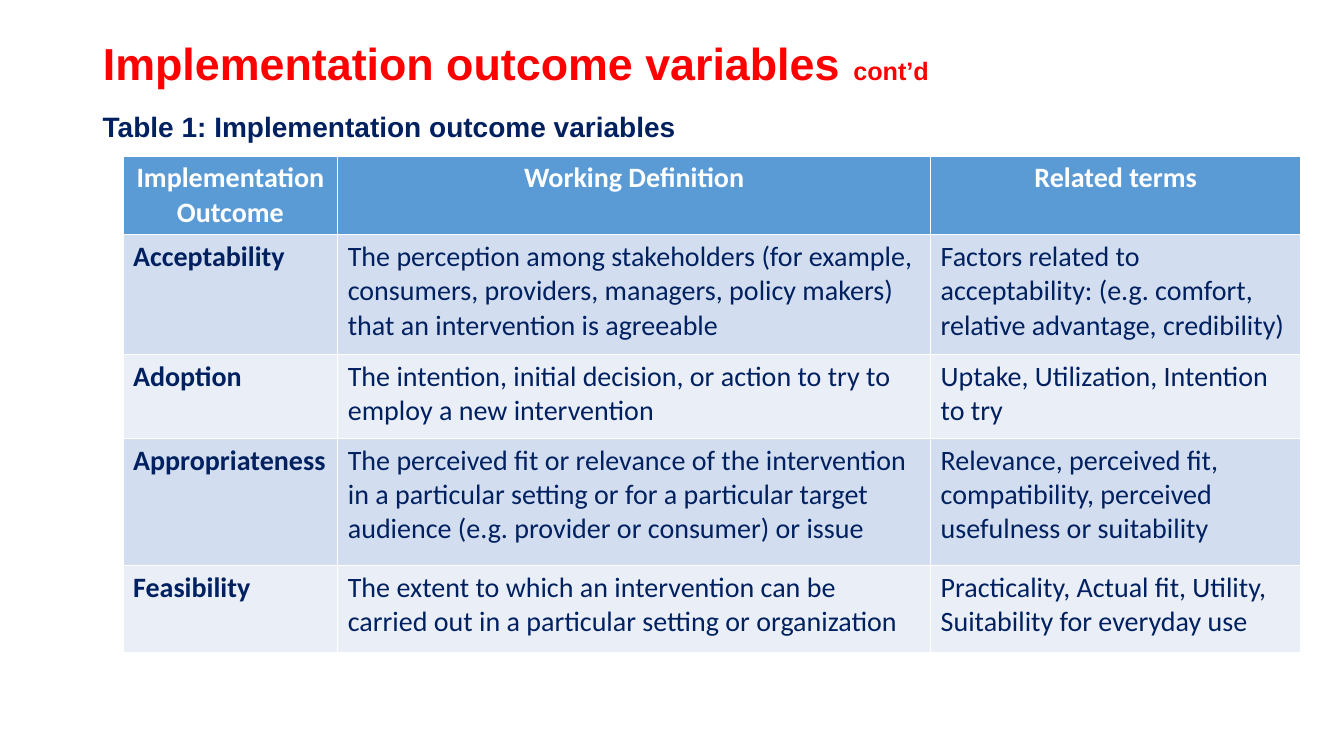
from pptx import Presentation
from pptx.dml.color import RGBColor
from pptx.enum.text import MSO_ANCHOR, MSO_AUTO_SIZE, PP_ALIGN
from pptx.util import Inches, Pt

RED = RGBColor(0xFF, 0x00, 0x00)
NAVY = RGBColor(0x00, 0x20, 0x60)
WHITE = RGBColor(0xFF, 0xFF, 0xFF)
HEADER_BLUE = RGBColor(0x5B, 0x9B, 0xD5)
BANDS = [RGBColor(0xEA, 0xEF, 0xF7), RGBColor(0xD2, 0xDE, 0xEF)]

TITLE = [("Implementation outcome variables ", 32), ("cont’d", 18)]
CAPTION = "Table 1: Implementation outcome variables"
ROWS = [
    ("Implementation\nOutcome", "Working Definition", "Related terms"),
    ("Acceptability",
     "The perception among stakeholders (for example, consumers, providers, "
     "managers, policy makers) that an intervention is agreeable",
     "Factors related to acceptability: (e.g. comfort, relative advantage, credibility)"),
    ("Adoption",
     "The intention, initial decision, or action to try to employ a new intervention",
     "Uptake, Utilization, Intention to try"),
    ("Appropriateness",
     "The perceived fit or relevance of the intervention in a particular setting "
     "or for a particular target audience (e.g. provider or consumer) or issue",
     "Relevance, perceived fit, compatibility, perceived usefulness or suitability"),
    ("Feasibility",
     "The extent to which an intervention can be carried out in a particular "
     "setting or organization",
     "Practicality, Actual fit, Utility, Suitability for everyday use"),
]
COL_WIDTHS = [2.13, 5.88, 3.67]
ROW_HEIGHTS = [0.78, 1.19, 0.83, 1.26, 0.86]
LEFT = 0.92


def style(font, name, size, color, bold):
    font.name, font.size, font.bold = name, Pt(size), bold
    font.color.rgb = color


prs = Presentation()
prs.slide_width, prs.slide_height = Inches(13.33), Inches(7.5)
s = prs.slides.add_slide(prs.slide_layouts[5])

title = s.shapes.title
title.left, title.top = Inches(LEFT), Inches(0.3)
title.width, title.height = Inches(11.5), Inches(0.7)
tf = title.text_frame
tf.auto_size = MSO_AUTO_SIZE.NONE
tf.vertical_anchor = MSO_ANCHOR.MIDDLE
p = tf.paragraphs[0]
p.alignment, p.line_spacing = PP_ALIGN.LEFT, 0.9
for text, size in TITLE:
    r = p.add_run()
    r.text = text
    style(r.font, "Arial", size, RED, True)

caption = s.shapes.add_textbox(Inches(LEFT), Inches(1.07), Inches(11.02), Inches(0.61))
tf = caption.text_frame
tf.word_wrap = True
tf.text = CAPTION
p = tf.paragraphs[0]
p.line_spacing = 0.9
style(p.runs[0].font, "Arial", 20, NAVY, True)

table = s.shapes.add_table(
    len(ROWS), len(COL_WIDTHS), Inches(1.22), Inches(1.55),
    Inches(sum(COL_WIDTHS)), Inches(sum(ROW_HEIGHTS))).table
for col, width in zip(table.columns, COL_WIDTHS):
    col.width = Inches(width)
for row, height in zip(table.rows, ROW_HEIGHTS):
    row.height = Inches(height)

for i, texts in enumerate(ROWS):
    header = i == 0
    for j, text in enumerate(texts):
        cell = table.cell(i, j)
        cell.fill.solid()
        cell.fill.fore_color.rgb = HEADER_BLUE if header else BANDS[i % 2]
        cell.text_frame.text = text
        for p in cell.text_frame.paragraphs:
            p.alignment = PP_ALIGN.CENTER if header else PP_ALIGN.LEFT
            style(p.runs[0].font, "Calibri", 20, WHITE if header else NAVY, header or j == 0)

prs.save("out.pptx")
